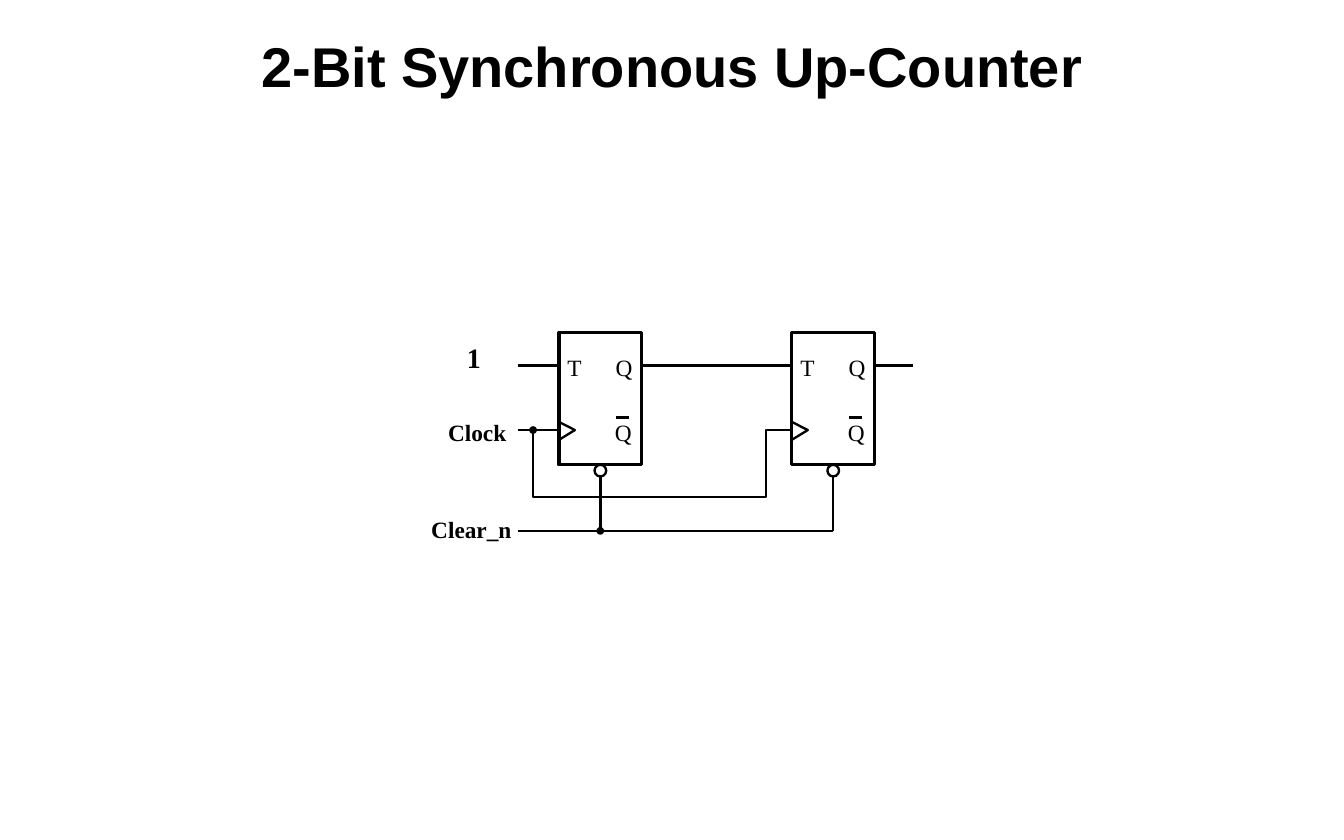
"""Build the slide showing a 2-bit synchronous up-counter made of T flip-flops."""
from pptx import Presentation
from pptx.dml.color import RGBColor
from pptx.enum import shapes, text
from pptx.oxml import ns
from pptx.util import Pt
from lxml import etree

COLORS = {"ink": "000000", "paper": "FFFFFF"}
STAGES = (359.3, 509)
STAGE_TOP, STAGE_WIDTH, STAGE_HEIGHT = 213.8, 53.3, 85
DATA_Y, CLOCK_Y, BUS_Y, CLEAR_Y = 235, 276.5, 319.7, 341.3
INPUT_X, OUTPUT_X = 332.8, 586.8
TAP_X, TURN_X = 342.7, 492.5
BUBBLE, DOT = 7.5, 5


def color(name):
    return RGBColor.from_string(COLORS[name])


def stroke(part, width=1.5):
    part.line.color.rgb = color("ink")
    part.line.width = Pt(width)


def add_wire(diagram, x1, y1, x2, y2):
    wire = diagram.add_connector(shapes.MSO_CONNECTOR.STRAIGHT, Pt(x1), Pt(y1), Pt(x2), Pt(y2))
    stroke(wire)
    etree.SubElement(wire._element.spPr, ns.qn("a:effectLst"))


def add_path(diagram, *points):
    start, *rest = [(Pt(x), Pt(y)) for x, y in points]
    builder = diagram.build_freeform(*start)
    builder.add_line_segments(rest, close=False)
    bend = builder.convert_to_shape()
    bend.fill.background()
    bend.shadow.inherit = False
    stroke(bend)


def add_block(diagram, kind, left, top, width, height, fill="paper", line=1.5):
    block = diagram.add_shape(kind, Pt(left), Pt(top), Pt(width), Pt(height))
    block.shadow.inherit = False
    block.fill.solid()
    block.fill.fore_color.rgb = color(fill)
    if line:
        stroke(block, line)
    else:
        block.line.fill.background()


def add_dot(diagram, x, y):
    add_block(diagram, shapes.MSO_SHAPE.OVAL, x - DOT / 2, y - DOT / 2, DOT, DOT, "ink", 0)


def add_label(diagram, words, left, top, width, size=15, bold=False):
    label = diagram.add_textbox(Pt(left), Pt(top), Pt(width), Pt(size * 1.2))
    frame = label.text_frame
    frame.margin_left = frame.margin_right = frame.margin_top = frame.margin_bottom = 0
    frame.word_wrap = False
    frame.auto_size = text.MSO_AUTO_SIZE.SHAPE_TO_FIT_TEXT
    set_words(frame, words, "Times New Roman", size, bold)


def set_words(frame, words, face, size, bold):
    frame.text = words
    font = frame.paragraphs[0].font
    font.name, font.size, font.bold = face, Pt(size), bold
    font.color.rgb = color("ink")


def add_title(slide, words):
    title = slide.shapes.title
    title.left, title.top, title.width, title.height = Pt(72), Pt(18), Pt(720), Pt(48)
    title.text_frame.vertical_anchor = text.MSO_ANCHOR.MIDDLE
    set_words(title.text_frame, words, "Arial", 36, True)
    title.text_frame.paragraphs[0].alignment = text.PP_ALIGN.CENTER


def add_flip_flop(diagram, left):
    center = left + STAGE_WIDTH / 2
    bottom = STAGE_TOP + STAGE_HEIGHT
    add_block(diagram, shapes.MSO_SHAPE.RECTANGLE, left, STAGE_TOP, STAGE_WIDTH, STAGE_HEIGHT, line=2.25)
    add_label(diagram, "T", left + 5.5, 226.8, 13)
    add_label(diagram, "Q", left + 36.5, 226.8, 15)
    add_label(diagram, "Q", left + 36, 268.7, 15)
    add_wire(diagram, left + 36.8, 268.5, left + 45.2, 268.5)
    add_path(diagram, (left, 282.8), (left + 10.3, CLOCK_Y), (left, 271.2))
    add_wire(diagram, center, bottom + BUBBLE, center, CLEAR_Y)
    add_block(diagram, shapes.MSO_SHAPE.OVAL, center - BUBBLE / 2, bottom, BUBBLE, BUBBLE)


def main():
    deck = Presentation()
    deck.slide_width, deck.slide_height = Pt(864), Pt(540)
    slide = deck.slides.add_slide(deck.slide_layouts[5])
    add_title(slide, "2-Bit Synchronous Up-Counter")

    diagram = slide.shapes.add_group_shape().shapes
    first, second = STAGES
    first_clear, second_clear = (left + STAGE_WIDTH / 2 for left in STAGES)
    for start, end in ((INPUT_X, first), (first + STAGE_WIDTH, second), (second + STAGE_WIDTH, OUTPUT_X)):
        add_wire(diagram, start, DATA_Y, end, DATA_Y)
    add_wire(diagram, INPUT_X, CLOCK_Y, first, CLOCK_Y)
    add_path(diagram, (TAP_X, CLOCK_Y), (TAP_X, BUS_Y), (TURN_X, BUS_Y), (TURN_X, CLOCK_Y), (second, CLOCK_Y))
    add_wire(diagram, INPUT_X, CLEAR_Y, second_clear, CLEAR_Y)
    for left in STAGES:
        add_flip_flop(diagram, left)
    add_dot(diagram, TAP_X, CLOCK_Y)
    add_dot(diagram, first_clear, CLEAR_Y)

    add_label(diagram, "1", 300.2, 218.9, 9.4, 18, True)
    add_label(diagram, "Clock", 288, 268.6, 39.6, bold=True)
    add_label(diagram, "Clear_n", 277.2, 331.2, 51.8, bold=True)
    deck.save("out.pptx")


if __name__ == "__main__":
    main()
